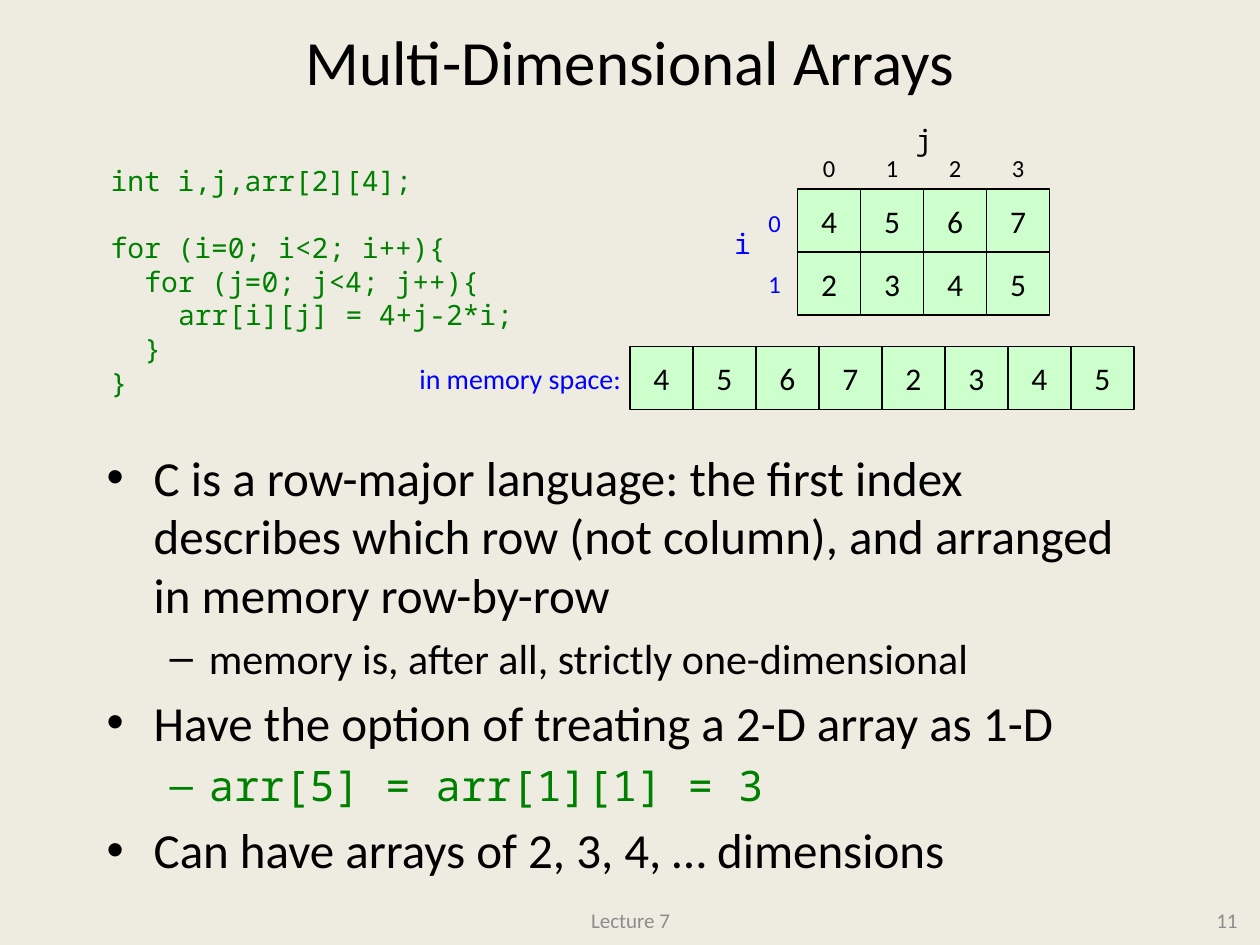
from pptx import Presentation
from pptx.dml.color import RGBColor
from pptx.enum.shapes import MSO_SHAPE
from pptx.enum.text import MSO_ANCHOR, PP_ALIGN
from pptx.oxml.ns import qn
from pptx.util import Cm, Pt
from lxml import etree

RECT = MSO_SHAPE.RECTANGLE
TOP, MID = MSO_ANCHOR.TOP, MSO_ANCHOR.MIDDLE
LEFT, CENTER, RIGHT = PP_ALIGN.LEFT, PP_ALIGN.CENTER, PP_ALIGN.RIGHT
SANS, MONO = "Calibri", "Noto Sans Mono"
HUES = {"back": "EEECE1", "ink": "000000", "code": "008000",
        "blue": "0000FF", "cell": "CCFFCC", "gray": "8C8C8C"}
SIDE = 1.27


def hue(name):
    return RGBColor.from_string(HUES[name])


class Page:
    def __init__(self, deck):
        self.slide = deck.slides.add_slide(deck.slide_layouts[5])
        self.shapes = self.slide.shapes
        fill = self.slide.background.fill
        fill.solid()
        fill.fore_color.rgb = hue("back")

    def style(self, para, text, size, color="ink", font=SANS, align=LEFT):
        para.text = text
        para.alignment = align
        para.font.size = Pt(size)
        para.font.name = font
        para.font.color.rgb = hue(color)

    def indent(self, para, left, hang=0, mark=None):
        props = para._p.get_or_add_pPr()
        props.set("marL", str(Cm(left)))
        props.set("indent", str(-Cm(hang)))
        if mark:
            etree.SubElement(props, qn("a:buFont")).set("typeface", "Arial")
            etree.SubElement(props, qn("a:buChar")).set("char", mark)

    def title(self, text, x, y, w, h):
        shape = self.shapes.title
        shape.left, shape.top, shape.width, shape.height = map(Cm, (x, y, w, h))
        shape.text_frame.vertical_anchor = MID
        self.style(shape.text_frame.paragraphs[0], text, 36, align=CENTER)

    def box(self, x, y, w, h, wrap=False, anchor=TOP):
        frame = self.shapes.add_textbox(*map(Cm, (x, y, w, h))).text_frame
        frame.word_wrap = wrap
        frame.vertical_anchor = anchor
        return frame

    def label(self, text, x, y, w, h, size, anchor=TOP, **look):
        frame = self.box(x, y, w, h, anchor=anchor)
        self.style(frame.paragraphs[0], text, size, **look)

    def lines(self, frame, count):
        return [frame.paragraphs[0]] + [frame.add_paragraph() for _ in range(count - 1)]

    def code(self, rows, x, y, w, h):
        frame = self.box(x, y, w, h)
        for para, (depth, gap, text) in zip(self.lines(frame, len(rows)), rows):
            self.style(para, text, 16, "code", MONO)
            self.indent(para, depth * 0.68)
            para.space_before = Pt(gap)

    def bullets(self, rows, x, y, w, h):
        frame = self.box(x, y, w, h, wrap=True)
        for para, (level, text, color, font) in zip(self.lines(frame, len(rows)), rows):
            size, left, hang, mark = ((28, 0.95, 0.95, "•"), (24, 2.06, 0.79, "–"))[level]
            self.style(para, text, size, color, font)
            para.level = level
            para.space_before = Pt(size * 0.2)
            self.indent(para, left, hang, mark)

    def cells(self, rows, x, y):
        for r, row in enumerate(rows):
            for c, value in enumerate(row):
                shape = self.shapes.add_shape(
                    RECT, Cm(x + c * SIDE), Cm(y + r * SIDE), Cm(SIDE), Cm(SIDE))
                shape.shadow.inherit = False
                shape.fill.solid()
                shape.fill.fore_color.rgb = hue("cell")
                shape.line.color.rgb = hue("ink")
                shape.line.width = Pt(0.75)
                frame = shape.text_frame
                frame.word_wrap = False
                frame.vertical_anchor = MID
                self.style(frame.paragraphs[0], str(value), 18, align=CENTER)


def main():
    deck = Presentation()
    deck.slide_width, deck.slide_height = Cm(25.4), Cm(19.05)
    page = Page(deck)
    page.title("Multi-Dimensional Arrays", 1.27, 0.2, 22.86, 2.03)
    page.bullets([
        (0, "C is a row-major language: the first index describes which row "
            "(not column), and arranged in memory row-by-row", "ink", SANS),
        (1, "memory is, after all, strictly one-dimensional", "ink", SANS),
        (0, "Have the option of treating a 2-D array as 1-D", "ink", SANS),
        (1, "arr[5] = arr[1][1] = 3", "code", MONO),
        (0, "Can have arrays of 2, 3, 4, … dimensions", "ink", SANS),
    ], 1.9, 8.89, 21.59, 8.46)
    page.code([
        (0, 0, "int i,j,arr[2][4];"),
        (0, 19, "for (i=0; i<2; i++){"),
        (1, 0, "for (j=0; j<4; j++){"),
        (2, 0, "arr[i][j] = 4+j-2*i;"),
        (1, 0, "}"),
        (0, 0, "}"),
    ], 1.98, 3.18, 8.64, 5)

    grid = [[4 + j - 2 * i for j in range(4)] for i in range(2)]
    page.cells([sum(grid, [])], 12.7, 6.98)
    page.cells(grid, 16.08, 3.81)
    for i in range(2):
        page.label(str(i), 15.24, 4.06 + i * 1.23, 0.79, 0.84, 14, color="blue")
    for j in range(4):
        page.label(str(j), 16.34 + j * SIDE, 2.97, 0.79, 0.84, 14)
    page.label("i", 14.55, 4.45, 0.86, 0.94, 16, color="blue", font=MONO)
    page.label("j", 18.21, 2.34, 0.86, 0.94, 16, font=MONO)
    page.label("in memory space:", 7.82, 7.16, 4.95, 0.94, 16, color="blue", align=RIGHT)

    page.label("Lecture 7", 8.69, 18.03, 8.05, 1.02, 12, MID, color="gray", align=CENTER)
    page.label("11", 19.28, 18.03, 5.92, 1.02, 12, MID, color="gray", align=RIGHT)
    deck.save("out.pptx")


if __name__ == "__main__":
    main()
